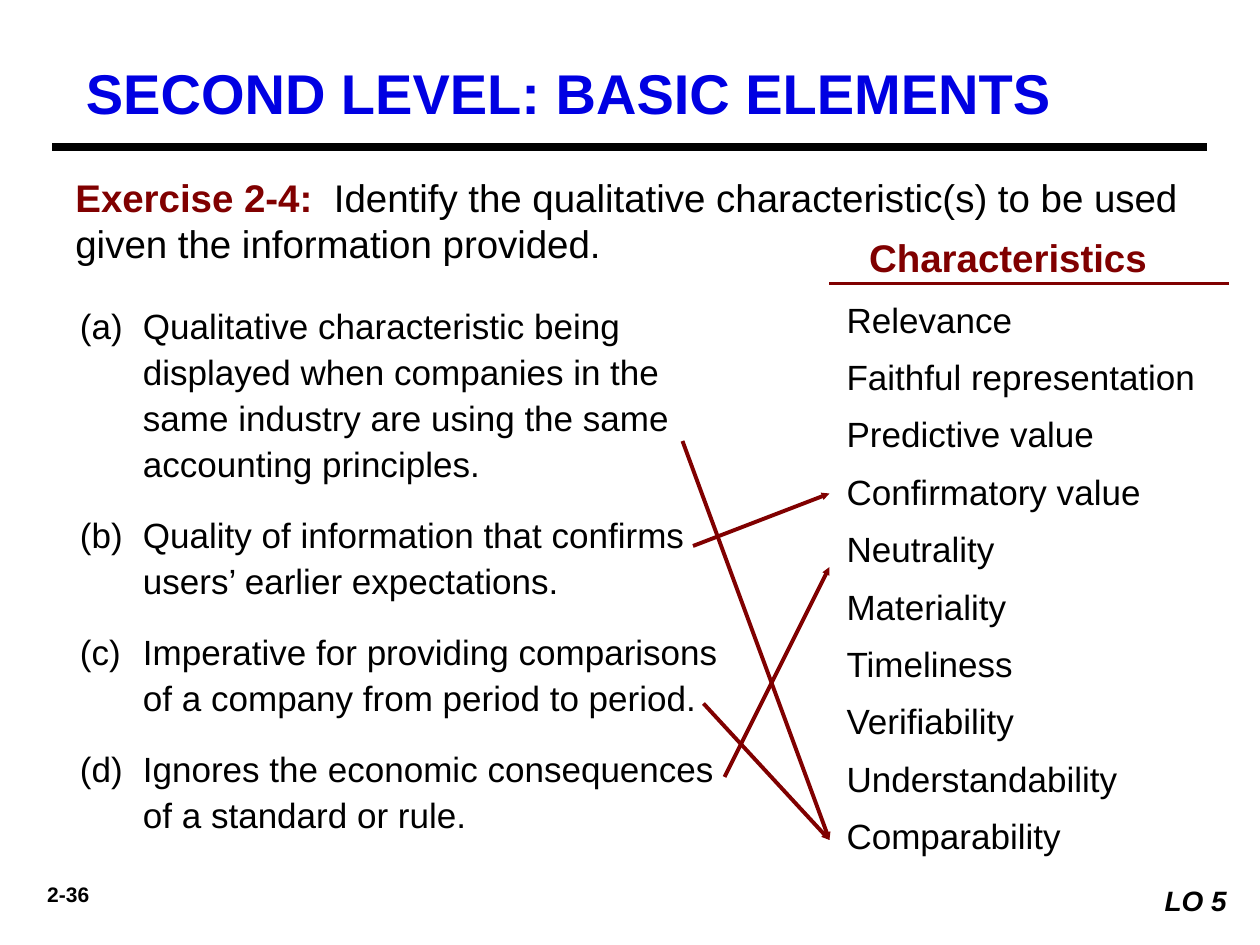
from collections import namedtuple
from dataclasses import dataclass

from lxml import etree
from pptx import Presentation
from pptx import util as u
from pptx.dml.color import RGBColor
from pptx.enum import shapes, text
from pptx.oxml.ns import qn

CELL = u.Inches(1) / 12  # the slide is a grid of 120 columns by 90 rows
Box = namedtuple("Box", "column row columns rows")


@dataclass(frozen=True)
class Theme:
    font: str = "Arial"
    ink: str = "000000"
    title: str = "0000E2"
    accent: str = "800000"
    paper: str = "FFFFFF"
    title_size: int = 32
    heading_size: int = 22
    body_size: int = 20
    objective_size: int = 16
    number_size: int = 12
    rule_width: float = 4.5
    line_width: float = 2.25


THEME = Theme()

STATEMENTS = [
    "Qualitative characteristic being displayed when companies in the same "
    "industry are using the same accounting principles.",
    "Quality of information that confirms users’ earlier expectations.",
    "Imperative for providing comparisons of a company from period to period.",
    "Ignores the economic consequences of a standard or rule.",
]
CHARACTERISTICS = [
    "Relevance", "Faithful representation", "Predictive value",
    "Confirmatory value", "Neutrality", "Materiality", "Timeliness",
    "Verifiability", "Understandability", "Comparability",
]
# Start column and row of each answer arrow, then the row it points to.
ANSWERS = [(65, 42, 80), (67, 67, 80), (66, 52, 47), (69, 74, 54)]


def cells(*counts):
    return [u.Emu(round(count * CELL)) for count in counts]


def apply_format(target, values):
    for name, value in values.items():
        setattr(target, name, value)


def add_text_box(slide, box, wrap=True):
    shape = slide.shapes.add_textbox(*cells(*box))
    shape.text_frame.word_wrap = wrap
    return shape


def add_run(paragraph, words, size, color=THEME.ink, **style):
    run = paragraph.add_run()
    run.text = words
    apply_format(run.font, {"name": THEME.font, "size": u.Pt(size), **style})
    run.font.color.rgb = RGBColor.from_string(color)


def add_line(slide, start, end, color, width, arrow=False):
    line = slide.shapes.add_connector(
        shapes.MSO_CONNECTOR.STRAIGHT, *cells(*start, *end))
    line.line.color.rgb = RGBColor.from_string(color)
    line.line.width = u.Pt(width)
    properties = line._element.spPr
    if arrow:
        etree.SubElement(properties.find(qn("a:ln")), qn("a:tailEnd"),
                         type="triangle", w="sm", len="sm")
    etree.SubElement(properties, qn("a:effectLst"))


def add_list(slide, box, items, spacing, numbering=None):
    """Fill the box with hanging paragraphs, numbered if a scheme is named."""
    frame = add_text_box(slide, box).text_frame
    for index, item in enumerate(items):
        paragraph = frame.paragraphs[0] if index == 0 else frame.add_paragraph()
        apply_format(paragraph, spacing)
        properties = paragraph._p.get_or_add_pPr()
        properties.set("marL", str(u.Inches(0.62)))
        properties.set("indent", str(u.Inches(-0.5)))
        if numbering:
            etree.SubElement(properties, qn("a:buFont"), typeface=THEME.font)
            etree.SubElement(properties, qn("a:buAutoNum"), type=numbering)
        add_run(paragraph, item, THEME.body_size)


def add_title(slide, box):
    paragraph = add_text_box(slide, box).text_frame.paragraphs[0]
    add_run(paragraph, "SECOND LEVEL: BASIC ELEMENTS", THEME.title_size,
            THEME.title, bold=True)
    rule_row = box.row + 9
    add_line(slide, (box.column - 2, rule_row),
             (box.column + box.columns, rule_row), THEME.ink, THEME.rule_width)


def add_exercise(slide, box):
    paragraph = add_text_box(slide, box).text_frame.paragraphs[0]
    add_run(paragraph, "Exercise 2-4:", THEME.heading_size, THEME.accent,
            bold=True)
    add_run(paragraph, "  Identify the qualitative characteristic(s) to be used "
            "given the information provided.", THEME.heading_size)


def add_statements(slide, box):
    spacing = {"line_spacing": 1.1, "space_before": u.Pt(10),
               "space_after": u.Pt(4)}
    add_list(slide, box, STATEMENTS, spacing, "alphaLcParenBoth")


def add_characteristics(slide, box):
    heading_box = Box(box.column + 1, box.row - 5, 34, 5)
    frame = add_text_box(slide, heading_box, wrap=False).text_frame
    frame.vertical_anchor = text.MSO_ANCHOR.MIDDLE
    paragraph = frame.paragraphs[0]
    paragraph.alignment = text.PP_ALIGN.CENTER
    add_run(paragraph, "Characteristics", THEME.heading_size, THEME.accent,
            bold=True)
    add_line(slide, (box.column + 1, box.row),
             (box.column + box.columns, box.row), THEME.accent, THEME.line_width)
    add_list(slide, box, CHARACTERISTICS,
             {"line_spacing": 1.2, "space_after": u.Pt(4)})


def add_answers(slide, list_box):
    for column, row, target_row in ANSWERS:
        add_line(slide, (column, row), (list_box.column + 1, target_row),
                 THEME.accent, THEME.line_width, arrow=True)


def add_footer(slide, number_box, objective_box):
    paragraph = add_text_box(slide, number_box).text_frame.paragraphs[0]
    paragraph.alignment = text.PP_ALIGN.CENTER
    add_run(paragraph, "2-36", THEME.number_size, bold=True)

    label = slide.shapes.add_shape(
        shapes.MSO_SHAPE.RECTANGLE, *cells(*objective_box))
    label.shadow.inherit = False
    label.fill.solid()
    label.fill.fore_color.rgb = RGBColor.from_string(THEME.paper)
    label.line.fill.background()
    label.text_frame.vertical_anchor = text.MSO_ANCHOR.TOP
    paragraph = label.text_frame.paragraphs[0]
    paragraph.alignment = text.PP_ALIGN.RIGHT
    add_run(paragraph, "LO 5", THEME.objective_size, bold=True, italic=True)


def main():
    presentation = Presentation()
    apply_format(presentation, {"slide_width": u.Inches(10),
                                "slide_height": u.Inches(7.5)})
    slide = presentation.slides.add_slide(presentation.slide_layouts[6])
    characteristics_box = Box(78, 27, 39, 57)
    add_title(slide, Box(7, 5, 108, 7.3))
    add_exercise(slide, Box(6, 16, 112, 10))
    add_statements(slide, Box(5, 28, 67, 54))
    add_characteristics(slide, characteristics_box)
    add_answers(slide, characteristics_box)
    add_footer(slide, Box(1, 83.4, 11, 3.6), Box(103, 83.6, 15, 4.4))
    presentation.save("out.pptx")


if __name__ == "__main__":
    main()
